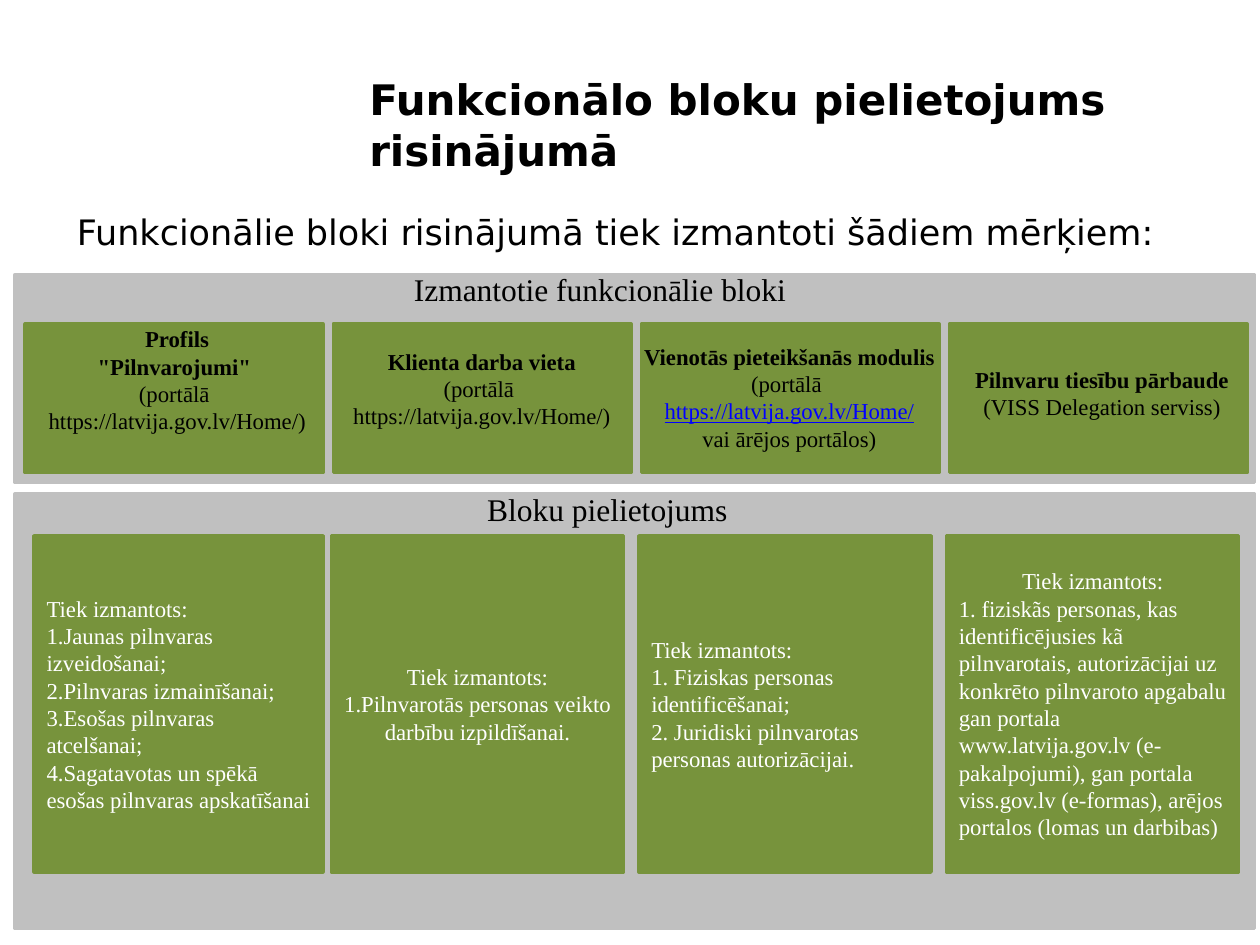
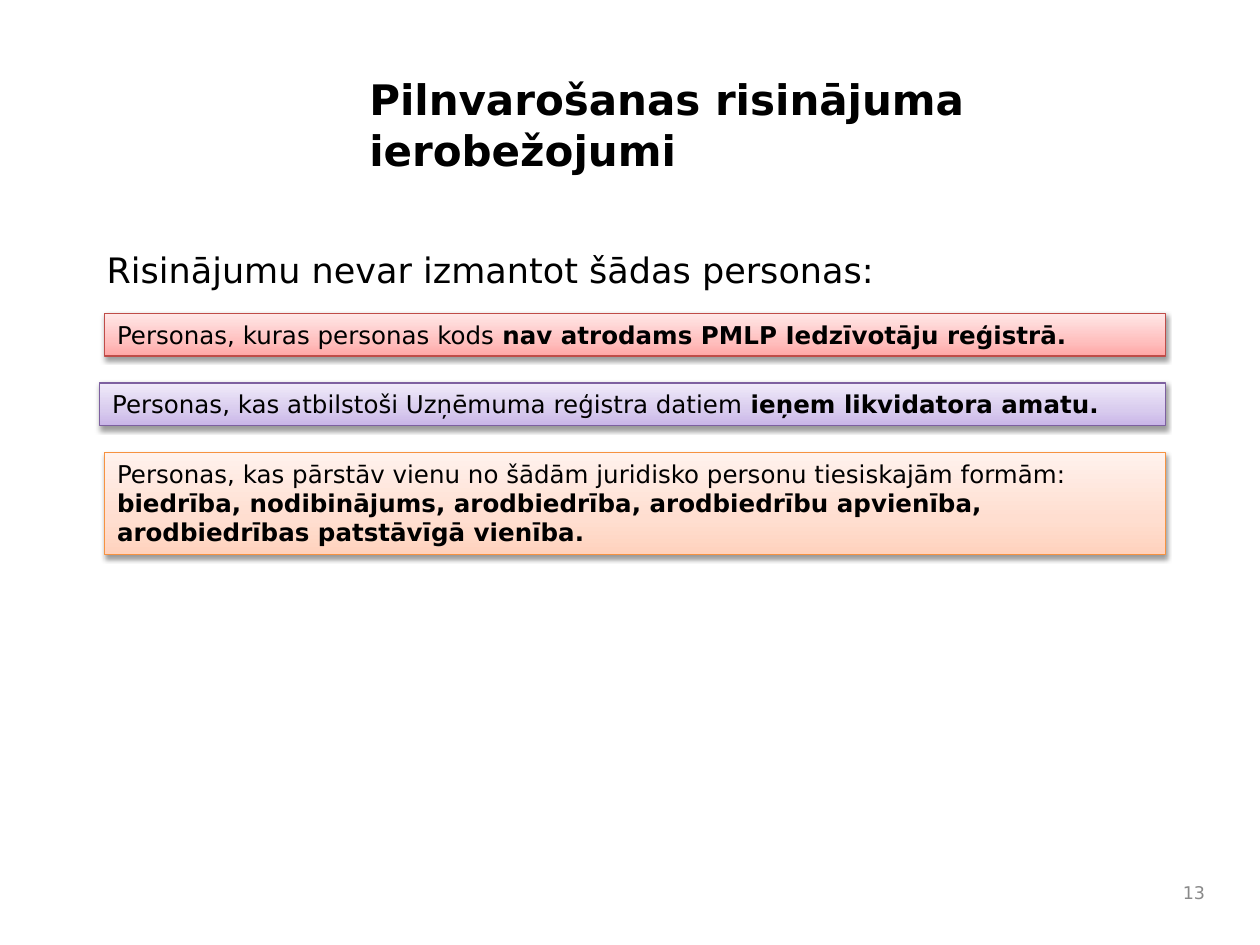
import copy

import pptx
import pptx.util
import pptx.dml.color
import pptx.enum.shapes
import pptx.enum.text
import pptx.oxml
import pptx.oxml.ns

Cm, Pt = pptx.util.Cm, pptx.util.Pt
RGBColor = pptx.dml.color.RGBColor
ALIGN = pptx.enum.text.PP_ALIGN
ANCHOR = pptx.enum.text.MSO_ANCHOR

# Colours
BLACK = RGBColor(0x00, 0x00, 0x00)
WHITE = RGBColor(0xFF, 0xFF, 0xFF)
PANEL_GREY = RGBColor(0xC0, 0xC0, 0xC0)
BLOCK_GREEN = RGBColor(0x77, 0x93, 0x3C)
LINK_BLUE = RGBColor(0x00, 0x00, 0xFF)
NUMBER_GREY = RGBColor(0x89, 0x89, 0x89)
RED_LINE = RGBColor(0xBF, 0x4C, 0x48)
RED_STOPS = [RGBColor(0xFF, 0xA6, 0xA5), RGBColor(0xFF, 0xC0, 0xBF), RGBColor(0xFF, 0xE7, 0xE7)]
PURPLE_LINE = RGBColor(0x7D, 0x60, 0xA0)
PURPLE_STOPS = [RGBColor(0xC9, 0xB5, 0xE8), RGBColor(0xD8, 0xCB, 0xEE), RGBColor(0xF0, 0xEA, 0xF9)]
ORANGE_LINE = RGBColor(0xF6, 0x92, 0x40)
ORANGE_STOPS = [RGBColor(0xFF, 0xD2, 0xBD), RGBColor(0xFF, 0xDE, 0xD0), RGBColor(0xFF, 0xF2, 0xED)]

SANS = "DejaVu Sans"
SERIF = "Times New Roman"

SHADOW_XML = (
    f'<a:outerShdw {pptx.oxml.ns.nsdecls("a")} blurRad="40000" dist="20000" '
    'dir="5400000" rotWithShape="0"><a:srgbClr val="000000">'
    '<a:alpha val="38000"/></a:srgbClr></a:outerShdw>'
)


class Deck:
    def __init__(self):
        self.prs = pptx.Presentation()
        self.prs.slide_width, self.prs.slide_height = Cm(25.4), Cm(19.05)
        self.s = None

    def slide(self, title):
        """Start a slide with the shared title style."""
        self.s = self.prs.slides.add_slide(self.prs.slide_layouts[5])
        sp = self.s.shapes.title
        sp.left, sp.top, sp.width, sp.height = Cm(7.19), Cm(1.07), Cm(16.94), Cm(2.87)
        self.fill_text(sp.text_frame, title, 24, SANS, anchor=ANCHOR.MIDDLE)
        self.style(sp.text_frame.paragraphs[0].runs[0], 24, SANS, BLACK, bold=True)

    def style(self, r, size, font, color, bold=False):
        r.font.size, r.font.name, r.font.bold = Pt(size), font, bold
        r.font.color.rgb = color

    def fill_text(self, tf, text, size, font, color=BLACK, align=ALIGN.LEFT, anchor=ANCHOR.TOP):
        tf.text = text
        tf.word_wrap = True
        tf.vertical_anchor = anchor
        for p in tf.paragraphs:
            p.alignment = align
            for r in p.runs:
                self.style(r, size, font, color)

    def text(self, left, top, width, height, text, size, font, **options):
        sp = self.s.shapes.add_textbox(Cm(left), Cm(top), Cm(width), Cm(height))
        self.fill_text(sp.text_frame, text, size, font, **options)
        return sp.text_frame

    def lead(self, left, top, width, text, align=ALIGN.LEFT):
        self.text(left, top, width, 1.3, text, 20, SANS, align=align)

    def heading(self, left, top, width, text):
        self.text(left, top, width, 1.02, text, 18, SERIF, align=ALIGN.CENTER, anchor=ANCHOR.MIDDLE)

    def rect(self, left, top, width, height, color, line_width=2):
        sp = self.s.shapes.add_shape(pptx.enum.shapes.MSO_SHAPE.RECTANGLE,
                                     Cm(left), Cm(top), Cm(width), Cm(height))
        sp.shadow.inherit = False
        sp.fill.solid()
        sp.fill.fore_color.rgb = color
        sp.line.color.rgb = color
        sp.line.width = Pt(line_width)
        return sp

    def label(self, left, top, height, text, bold_lines):
        """Centred block name, bold lines first."""
        tf = self.text(left, top, 8.2, height, text, 13, SERIF, align=ALIGN.CENTER)
        for p in tf.paragraphs[:bold_lines]:
            p.runs[0].font.bold = True
        return tf

    def notice(self, left, top, width, height, plain, bold, line, stops):
        """Gradient bar with a soft shadow and a bold ending."""
        sp = self.rect(left, top, width, height, line, 0.75)
        sp.fill.gradient()
        sp.fill.gradient_angle = 90
        stop_list = sp.element.spPr.find(".//" + pptx.oxml.ns.qn("a:gsLst"))
        stop_list.append(copy.deepcopy(stop_list[-1]))
        for stop, position, color in zip(sp.fill.gradient_stops, (0, 0.35, 1), stops):
            stop.position = position
            stop.color.rgb = color
        effects = sp.element.spPr.find(pptx.oxml.ns.qn("a:effectLst"))
        effects.append(pptx.oxml.parse_xml(SHADOW_XML))
        self.fill_text(sp.text_frame, plain, 14, SANS)
        r = sp.text_frame.paragraphs[0].add_run()
        r.text = bold
        self.style(r, 14, SANS, BLACK, bold=True)


def blocks_slide(deck):
    deck.slide("Funkcionālo bloku pielietojums risinājumā")
    deck.lead(1.3, 4.11, 22.83, "Funkcionālie bloki risinājumā tiek izmantoti šādiem mērķiem:")

    # Blocks in use
    deck.rect(0.3, 5.54, 24.99, 4.19, PANEL_GREY)
    deck.heading(6.5, 5.32, 11.2, "Izmantotie funkcionālie bloki")
    for column in range(4):
        deck.rect(0.51 + 6.21 * column, 6.53, 6, 3, BLOCK_GREEN)
    deck.label(-0.53, 6.43, 2.49,
               'Profils\n"Pilnvarojumi" \n(portālā \nhttps://latvija.gov.lv/Home/)', 2)
    deck.label(5.61, 6.88, 1.93, "Klienta darba vieta\n(portālā \nhttps://latvija.gov.lv/Home/)", 1)
    tf = deck.label(11.81, 6.78, 2.49, "Vienotās pieteikšanās modulis\n(portālā \n"
                    "https://latvija.gov.lv/Home/\nvai ārējos portālos)", 1)
    r = tf.paragraphs[2].runs[0]
    r.font.underline = True
    r.font.color.rgb = LINK_BLUE
    deck.label(18.11, 7.24, 1.37, "Pilnvaru tiesību pārbaude\n(VISS Delegation serviss)", 1)

    # What the blocks are used for
    deck.rect(0.3, 9.96, 24.99, 8.76, PANEL_GREY)
    deck.heading(9.3, 9.75, 5.89, "Bloku pielietojums")
    uses = [
        (0.69, 5.82, ALIGN.LEFT, ALIGN.LEFT,
         "1.Jaunas pilnvaras izveidošanai;\n2.Pilnvaras izmainīšanai;\n"
         "3.Esošas pilnvaras atcelšanai;\n4.Sagatavotas un spēkā esošas pilnvaras apskatīšanai"),
        (6.68, 5.89, ALIGN.CENTER, ALIGN.CENTER,
         "1.Pilnvarotās personas veikto darbību izpildīšanai."),
        (12.88, 5.89, ALIGN.LEFT, ALIGN.LEFT,
         "1. Fiziskas personas identificēšanai;\n2. Juridiski pilnvarotas personas autorizācijai."),
        (19.08, 5.89, ALIGN.CENTER, ALIGN.LEFT,
         "1. fiziskãs personas, kas identificējusies kã pilnvarotais, autorizācijai uz konkrēto "
         "pilnvaroto apgabalu gan portala www.latvija.gov.lv (e-pakalpojumi), gan portala "
         "viss.gov.lv (e-formas), arējos portalos (lomas un darbibas)"),
    ]
    for left, width, intro_align, align, items in uses:
        tf = deck.rect(left, 10.8, width, 6.78, BLOCK_GREEN).text_frame
        deck.fill_text(tf, "Tiek izmantots:\n" + items, 13, SERIF, WHITE, align, ANCHOR.MIDDLE)
        tf.paragraphs[0].alignment = intro_align


def limits_slide(deck):
    deck.slide("Pilnvarošanas risinājuma ierobežojumi")
    deck.lead(1.9, 4.88, 22.23, "Risinājumu nevar izmantot šādas personas:", ALIGN.JUSTIFY)

    # Excluded persons
    deck.notice(2.11, 6.32, 21.39, 0.86, "Personas, kuras personas kods ",
                "nav atrodams PMLP Iedzīvotāju reģistrā.", RED_LINE, RED_STOPS)
    deck.notice(2.01, 7.72, 21.49, 0.86, "Personas, kas atbilstoši Uzņēmuma reģistra datiem ",
                "ieņem likvidatora amatu.", PURPLE_LINE, PURPLE_STOPS)
    deck.notice(2.11, 9.12, 21.39, 2.06,
                "Personas, kas pārstāv vienu no šādām juridisko personu tiesiskajām formām: ",
                "biedrība, nodibinājums, arodbiedrība, arodbiedrību apvienība, "
                "arodbiedrības patstāvīgā vienība.", ORANGE_LINE, ORANGE_STOPS)

    # Slide number
    deck.text(23.09, 17.58, 1.45, 0.84, "13", 10, SANS, color=NUMBER_GREY,
              align=ALIGN.RIGHT, anchor=ANCHOR.MIDDLE)


def main():
    deck = Deck()
    blocks_slide(deck)
    limits_slide(deck)
    deck.prs.save("out.pptx")


if __name__ == "__main__":
    main()
